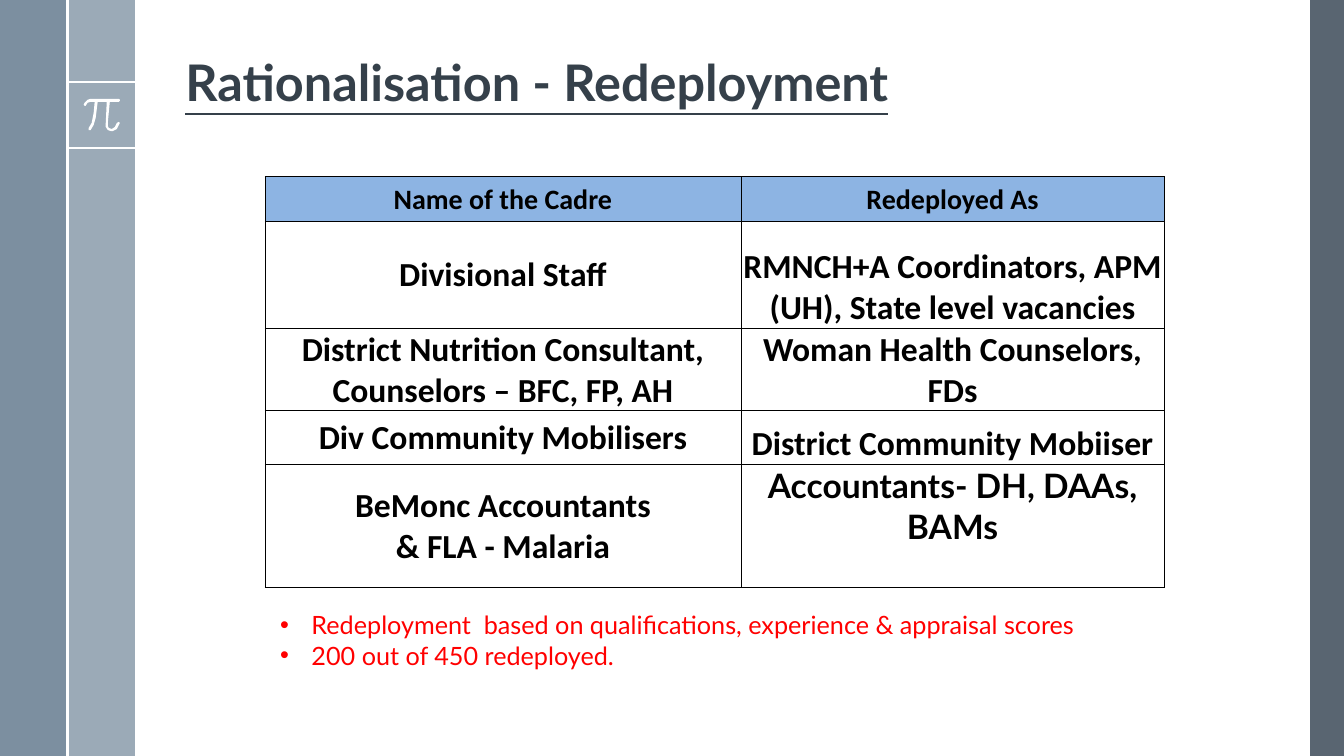
from dataclasses import dataclass

from lxml.etree import SubElement
from pptx import Presentation
from pptx.dml.color import RGBColor
from pptx.enum.shapes import MSO_CONNECTOR, MSO_SHAPE
from pptx.enum.text import MSO_ANCHOR, PP_ALIGN
from pptx.oxml.ns import qn
from pptx.util import Cm, Pt


@dataclass(frozen=True)
class Theme:
    heading_font: str = "Lato"
    table_font: str = "Calibri"
    white: str = "FFFFFF"
    ink: str = "000000"
    title: str = "35404A"
    header: str = "8DB4E3"
    note: str = "FF0000"
    title_size: int = 36
    header_size: int = 20
    body_size: int = 24
    note_size: int = 18


@dataclass(frozen=True)
class Band:
    left: float
    width: float
    color: str
    opacity: int


@dataclass(frozen=True)
class Rule:
    x1: float
    y1: float
    x2: float
    y2: float


@dataclass(frozen=True)
class Entry:
    lines: tuple[str, ...]
    anchor: MSO_ANCHOR = MSO_ANCHOR.MIDDLE
    font: str = Theme.table_font


@dataclass(frozen=True)
class Row:
    height: float
    cadre: Entry
    redeployed: Entry


THEME = Theme()
WIDTH, HEIGHT = 33.87, 19.05
RAIL = 1.7

BANDS = [
    Band(33.02, 0.85, "475562", 90),
    Band(RAIL, RAIL, "9BAAB7", 100),
    Band(0, RAIL, "6A8093", 88),
]
RULES = [
    Rule(RAIL, 2.06, 2 * RAIL, 2.06),
    Rule(RAIL, 3.73, 2 * RAIL, 3.73),
    Rule(RAIL, 0, RAIL, HEIGHT),
]
# Outline of the pi sign, in hundredths of an inch
PI_SIGN = [
    (118, 98), (90, 98), (87, 99), (84, 102), (83, 104), (84, 105), (85, 105),
    (87, 102), (90, 101), (94, 101), (93, 112), (91, 122), (88, 127), (88, 129),
    (89, 129), (90, 129), (93, 124), (95, 117), (97, 101), (106, 101), (105, 122),
    (105, 126), (107, 129), (110, 130), (112, 130), (116, 128), (119, 122),
    (118, 121), (116, 122), (114, 126), (111, 128), (108, 127), (107, 125),
    (107, 122), (109, 101), (118, 101), (119, 100), (119, 99),
]
COLUMNS = (11.99, 10.67)
LOW = MSO_ANCHOR.BOTTOM
ROWS = [
    Row(1.13, Entry(("Name of the Cadre",)), Entry(("Redeployed As",))),
    Row(2.69, Entry(("Divisional Staff",)),
        Entry(("RMNCH+A Coordinators, APM (UH), State level vacancies",), LOW)),
    Row(2.08, Entry(("District Nutrition Consultant, Counselors – BFC, FP, AH",)),
        Entry(("Woman Health Counselors, FDs",), LOW)),
    Row(1.36, Entry(("Div Community Mobilisers",)),
        Entry(("District Community Mobiiser",), LOW)),
    Row(3.1, Entry(("BeMonc Accountants", "& FLA - Malaria")),
        Entry(("Accountants- DH, DAAs, BAMs",), MSO_ANCHOR.TOP, THEME.heading_font)),
]
NOTES = [
    "Redeployment  based on qualifications, experience & appraisal scores",
    "200 out of 450 redeployed.",
]


def rgb(color: str) -> RGBColor:
    return RGBColor.from_string(color)


def add_run(p, text: str, font: str, size: int, color: str, bold: bool = False):
    r = p.add_run()
    r.text = text
    r.font.name, r.font.size, r.font.bold = font, Pt(size), bold
    r.font.color.rgb = rgb(color)
    return r


def paint(sp, color: str) -> None:
    sp.shadow.inherit = False
    sp.fill.solid()
    sp.fill.fore_color.rgb = rgb(color)
    sp.line.fill.background()


def draw_band(s, band: Band) -> None:
    sp = s.shapes.add_shape(
        MSO_SHAPE.RECTANGLE, Cm(band.left), Cm(0), Cm(band.width), Cm(HEIGHT))
    paint(sp, band.color)
    if band.opacity < 100:
        clr = sp.fill._xPr.find(".//" + qn("a:srgbClr"))
        SubElement(clr, qn("a:alpha")).set("val", str(band.opacity * 1000))


def draw_rule(s, rule: Rule) -> None:
    line = s.shapes.add_connector(
        MSO_CONNECTOR.STRAIGHT, Cm(rule.x1), Cm(rule.y1), Cm(rule.x2), Cm(rule.y2))
    line.line.color.rgb = rgb(THEME.white)
    line.line.width = Pt(1.5)
    SubElement(line._element.spPr, qn("a:effectLst"))


def draw_pi(s) -> None:
    builder = s.shapes.build_freeform(*PI_SIGN[0], scale=Cm(2.54) / 100)
    builder.add_line_segments(PI_SIGN[1:], close=True)
    paint(builder.convert_to_shape(), THEME.white)


def add_text_box(s, left: float, top: float, width: float, height: float):
    tf = s.shapes.add_textbox(Cm(left), Cm(top), Cm(width), Cm(height)).text_frame
    tf.word_wrap = True
    return tf


def set_borders(cell, top_width: float) -> None:
    tc_pr = cell._tc.get_or_add_tcPr()
    widths = {"a:lnL": 0.5, "a:lnR": 0.5, "a:lnT": top_width, "a:lnB": 0.5}
    for i, (side, width) in enumerate(widths.items()):
        ln = SubElement(tc_pr, qn(side), w=str(Pt(width)))
        fill = SubElement(ln, qn("a:solidFill"))
        SubElement(fill, qn("a:srgbClr")).set("val", THEME.ink)
        tc_pr.insert(i, ln)  # borders come before the fill


def fill_cell(cell, entry: Entry, is_header: bool) -> None:
    cell.margin_left = cell.margin_right = cell.margin_top = Cm(0.03)
    cell.margin_bottom = Cm(0)
    cell.vertical_anchor = entry.anchor
    if is_header:
        cell.fill.solid()
        cell.fill.fore_color.rgb = rgb(THEME.header)
    else:
        cell.fill.background()
    set_borders(cell, 1 if is_header else 0.5)
    size = THEME.header_size if is_header else THEME.body_size
    tf = cell.text_frame
    for i, text in enumerate(entry.lines):
        p = tf.add_paragraph() if i else tf.paragraphs[0]
        p.alignment = PP_ALIGN.CENTER
        add_run(p, text, entry.font, size, THEME.ink, bold=True)


def draw_table(s) -> None:
    table = s.shapes.add_table(
        len(ROWS), len(COLUMNS), Cm(6.68), Cm(4.45),
        Cm(sum(COLUMNS)), Cm(sum(row.height for row in ROWS))).table
    table.horz_banding = False
    for column, width in zip(table.columns, COLUMNS):
        column.width = Cm(width)
    for i, row in enumerate(ROWS):
        table.rows[i].height = Cm(row.height)
        for j, entry in enumerate((row.cadre, row.redeployed)):
            fill_cell(table.cell(i, j), entry, is_header=i == 0)


def draw_notes(s) -> None:
    tf = add_text_box(s, 6.81, 15.24, 22.43, 1.8)
    for i, text in enumerate(NOTES):
        p = tf.add_paragraph() if i else tf.paragraphs[0]
        p_pr = p._p.get_or_add_pPr()
        p_pr.set("marL", str(Cm(0.79)))
        p_pr.set("indent", str(-Cm(0.79)))
        SubElement(p_pr, qn("a:buFont")).set("typeface", "Arial")
        SubElement(p_pr, qn("a:buChar")).set("char", "•")
        add_run(p, text, THEME.heading_font, THEME.note_size, THEME.note)


def main() -> None:
    prs = Presentation()
    prs.slide_width, prs.slide_height = Cm(WIDTH), Cm(HEIGHT)
    s = prs.slides.add_slide(prs.slide_layouts[6])

    # Side bands and pi emblem
    for band in BANDS:
        draw_band(s, band)
    for rule in RULES:
        draw_rule(s, rule)
    draw_pi(s)

    # Title
    tf = add_text_box(s, 4.42, 0.46, 27.18, 2.49)
    tf.vertical_anchor = MSO_ANCHOR.BOTTOM
    p = tf.paragraphs[0]
    p.line_spacing = 0.9
    r = add_run(p, "Rationalisation - Redeployment", THEME.heading_font,
                THEME.title_size, THEME.title, bold=True)
    r.font.underline = True

    # Cadre table and notes
    draw_table(s)
    draw_notes(s)
    prs.save("out.pptx")


if __name__ == "__main__":
    main()
